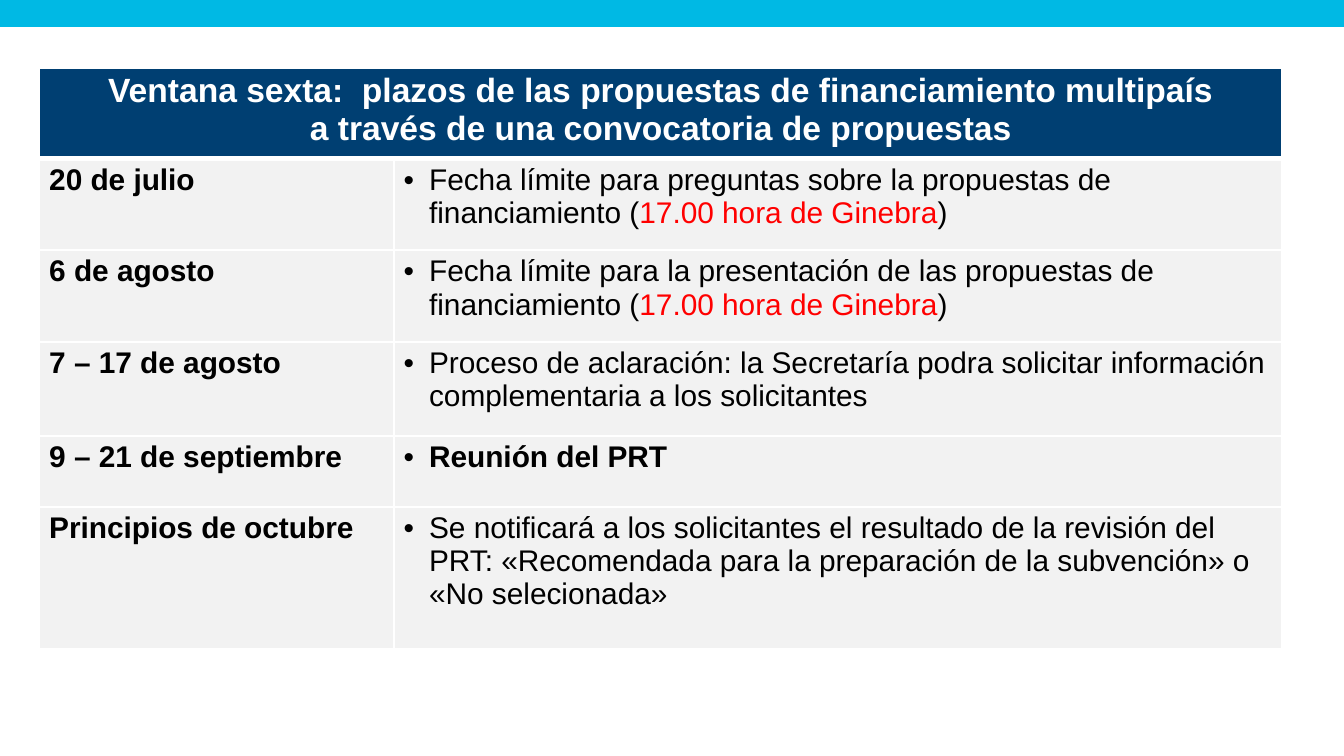
from dataclasses import dataclass

import lxml.etree
import pptx
import pptx.dml.color
import pptx.enum.shapes
import pptx.enum.text
import pptx.oxml.ns
import pptx.util

Cm = pptx.util.Cm
Align = pptx.enum.text.PP_ALIGN
qn = pptx.oxml.ns.qn


@dataclass(frozen=True)
class Theme:
    font: str = "Arial"
    title_size: int = 18
    body_size: int = 16
    bar: str = "00B9E4"
    header: str = "003F72"
    row: str = "F2F2F2"
    white: str = "FFFFFF"
    text: str = "000000"
    alert: str = "FF0000"


def rgb(value):
    return pptx.dml.color.RGBColor.from_string(value)


def add_run(paragraph, text, *, font, size, color, bold=False):
    run = paragraph.add_run()
    run.text = text
    run.font.name = font
    run.font.size = pptx.util.Pt(size)
    run.font.bold = bold
    run.font.color.rgb = rgb(color)


def add_bullet(paragraph, indent):
    properties = paragraph._p.get_or_add_pPr()
    properties.set("marL", str(indent))
    properties.set("indent", str(-indent))
    lxml.etree.SubElement(properties, qn("a:buFont"), typeface="Arial")
    lxml.etree.SubElement(properties, qn("a:buChar"), char="•")


def set_borders(cell, color, bottom):
    """Draw 1 pt edges, with the bottom edge as wide as given in points."""
    properties = cell._tc.get_or_add_tcPr()
    for index, (edge, width) in enumerate(zip("LRTB", (1, 1, 1, bottom))):
        line = lxml.etree.Element(qn(f"a:ln{edge}"), w=str(pptx.util.Pt(width)))
        fill = lxml.etree.SubElement(line, qn("a:solidFill"))
        lxml.etree.SubElement(fill, qn("a:srgbClr"), val=color)
        properties.insert(index, line)


class SlideBuilder:
    def __init__(self, slide, theme):
        self.slide = slide
        self.theme = theme

    def bar(self, left, top, width, height):
        shape = self.slide.shapes.add_shape(
            pptx.enum.shapes.MSO_SHAPE.RECTANGLE, left, top, width, height)
        shape.shadow.inherit = False
        shape.fill.solid()
        shape.fill.fore_color.rgb = rgb(self.theme.bar)
        shape.line.fill.background()

    def table(self, left, top, widths, heights):
        frame = self.slide.shapes.add_table(
            len(heights), len(widths), left, top, sum(widths), sum(heights))
        table = frame.table
        table.first_row = table.horz_banding = False
        for column, width in zip(table.columns, widths):
            column.width = width
        for row, height in zip(table.rows, heights):
            row.height = height
        return table

    def cell(self, cell, fill, bottom=1):
        cell.fill.solid()
        cell.fill.fore_color.rgb = rgb(fill)
        set_borders(cell, self.theme.white, bottom)
        cell.margin_left = cell.margin_right = Cm(0.18)
        cell.margin_top = cell.margin_bottom = Cm(0.09)
        return cell.text_frame.paragraphs[0]

    def header(self, table, text):
        first, last = table.cell(0, 0), table.cell(0, len(table.columns) - 1)
        first.merge(last)
        self.cell(last, self.theme.header, bottom=3)
        paragraph = self.cell(first, self.theme.header, bottom=3)
        paragraph.alignment = Align.CENTER
        for index, line in enumerate(text.split("\n")):
            if index:
                paragraph.add_line_break()
            add_run(paragraph, line, font=self.theme.font, bold=True,
                    size=self.theme.title_size, color=self.theme.white)

    def deadline(self, table, row, date, parts, bold=False, alignment=None):
        """Fill a row; every second part of the description is highlighted."""
        style = {"font": self.theme.font, "size": self.theme.body_size}
        paragraph = self.cell(table.cell(row, 0), self.theme.row)
        add_run(paragraph, date, bold=True, color=self.theme.text, **style)
        paragraph = self.cell(table.cell(row, 1), self.theme.row)
        paragraph.alignment = alignment
        add_bullet(paragraph, Cm(0.48))
        for index, part in enumerate(parts):
            color = self.theme.alert if index % 2 else self.theme.text
            add_run(paragraph, part, bold=bold, color=color, **style)


def main():
    presentation = pptx.Presentation()
    presentation.slide_width = Cm(25.4)
    presentation.slide_height = Cm(14.29)
    slide = presentation.slides.add_slide(presentation.slide_layouts[6])
    builder = SlideBuilder(slide, Theme())

    builder.bar(Cm(0), Cm(0), Cm(25.45), Cm(0.51))
    table = builder.table(
        Cm(0.75), Cm(1.28), [Cm(6.7), Cm(16.78)],
        [Cm(height) for height in (1.72, 1.73, 1.73, 1.78, 1.34, 2.68)])
    builder.header(
        table,
        "Ventana sexta:  plazos de las propuestas de financiamiento multipaís\n"
        "a través de una convocatoria de propuestas")

    hour = ("17.00 hora de Ginebra", ")")
    deadlines = [
        ("20 de julio",
         ("Fecha límite para preguntas sobre la propuestas de financiamiento (", *hour)),
        ("6 de agosto",
         ("Fecha límite para la presentación de las propuestas de financiamiento (", *hour)),
        ("7 – 17 de agosto",
         ("Proceso de aclaración: la Secretaría podra solicitar información "
          "complementaria a los solicitantes",)),
        ("9 – 21 de septiembre", ("Reunión del PRT",), True, Align.JUSTIFY),
        ("Principios de octubre",
         ("Se notificará a los solicitantes el resultado de la revisión del PRT: "
          "«Recomendada para la preparación de la subvención» o «No selecionada»",)),
    ]
    for row, deadline in enumerate(deadlines, start=1):
        builder.deadline(table, row, *deadline)

    presentation.save("out.pptx")


if __name__ == "__main__":
    main()
